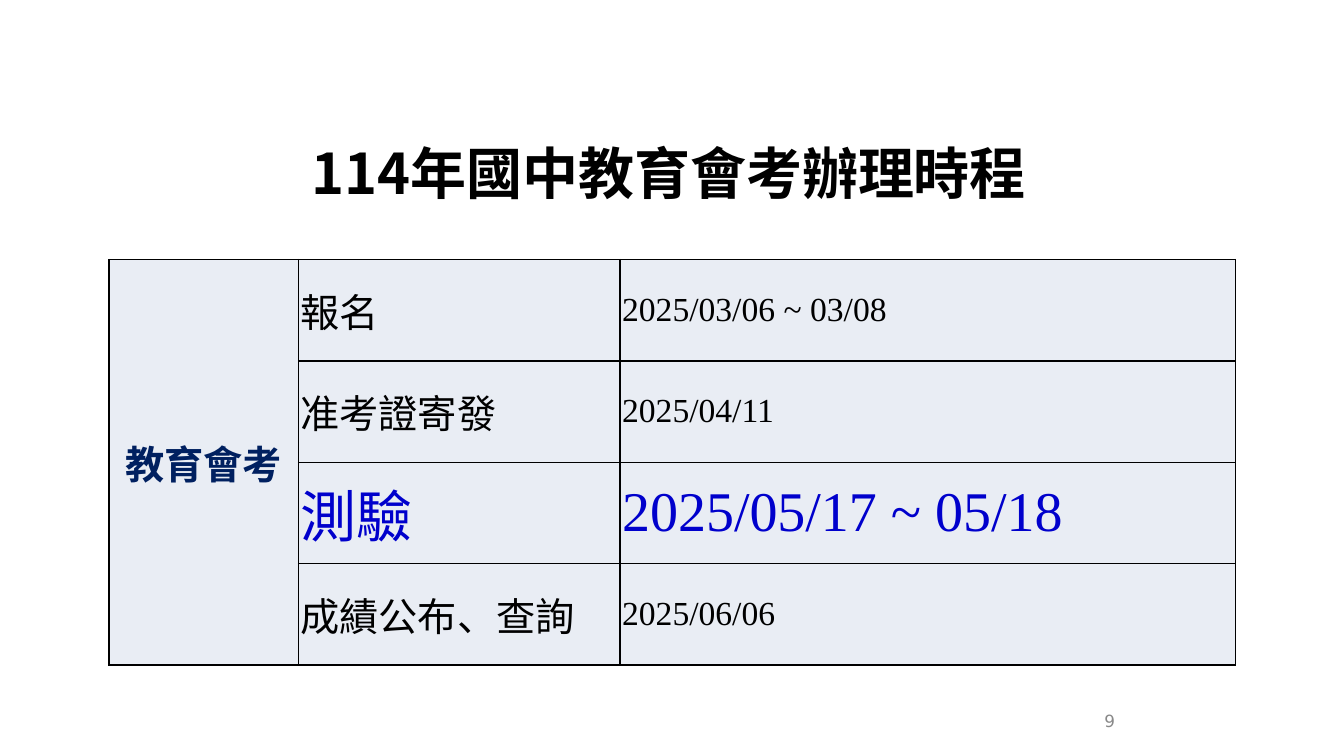
from lxml import etree
from pptx import Presentation
from pptx.dml.color import RGBColor
from pptx.enum.text import MSO_ANCHOR as Anchor, PP_ALIGN as Align
from pptx.oxml import parse_xml
from pptx.oxml.ns import nsdecls, qn
from pptx.util import Pt

BLACK = RGBColor(0x00, 0x00, 0x00)
NAVY = RGBColor(0x00, 0x20, 0x60)
BLUE = RGBColor(0x00, 0x00, 0xCC)
GRAY = RGBColor(0x89, 0x89, 0x89)
PALE = RGBColor(0xE9, 0xED, 0xF4)
CJK = "Noto Sans CJK SC"
SERIF = "Times New Roman"

COLUMN_WIDTHS = (135.4, 229.7, 439.9)
SCHEDULE = [  # step, dates, step size, date size, colour
    ("報名", "2025/03/06 ~ 03/08", 28, 24, BLACK),
    ("准考證寄發", "2025/04/11", 28, 24, BLACK),
    ("測驗", "2025/05/17 ~ 05/18", 40, 40, BLUE),
    ("成績公布、查詢", "2025/06/06", 28, 24, BLACK),
]


def write(frame, text, *, size, font, color=BLACK, bold=False,
          align=Align.LEFT, shadow=False):
    frame.word_wrap = True
    paragraph = frame.paragraphs[0]
    paragraph.alignment = align
    run = paragraph.add_run()
    run.text = text
    run.font.size, run.font.bold, run.font.name = Pt(size), bold, font
    run.font.color.rgb = color
    latin = run.font._element.find(qn("a:latin"))
    latin.addnext(parse_xml(f'<a:ea {nsdecls("a")} typeface="{CJK}"/>'))
    if shadow:
        latin.addprevious(parse_xml(
            f'<a:effectLst {nsdecls("a")}>'
            '<a:outerShdw blurRad="38100" dist="38100" dir="2700000" algn="tl">'
            '<a:srgbClr val="000000"><a:alpha val="43000"/></a:srgbClr>'
            '</a:outerShdw></a:effectLst>'))


def add_label(slide, box, text, **text_format):
    frame = slide.shapes.add_textbox(*map(Pt, box)).text_frame
    frame.vertical_anchor = Anchor.MIDDLE
    write(frame, text, **text_format)


def style_cell(cell):
    cell.fill.solid()
    cell.fill.fore_color.rgb = PALE
    cell.vertical_anchor = Anchor.MIDDLE
    cell.margin_left = cell.margin_right = Pt(1.5)
    cell.margin_top = cell.margin_bottom = Pt(0)
    # Borders come before the fill in the cell properties
    properties = cell._tc.get_or_add_tcPr()
    for position, side in enumerate(("lnL", "lnR", "lnT", "lnB")):
        border = etree.Element(qn(f"a:{side}"), w=str(Pt(1)))
        fill = etree.SubElement(border, qn("a:solidFill"))
        etree.SubElement(fill, qn("a:srgbClr"), val=str(BLACK))
        properties.insert(position, border)


def add_schedule(slide, left, top, width, height):
    grid = slide.shapes.add_table(len(SCHEDULE), len(COLUMN_WIDTHS), Pt(left),
                                  Pt(top), Pt(width), Pt(height)).table
    for column, column_width in zip(grid.columns, COLUMN_WIDTHS):
        column.width = Pt(column_width)
    for row in grid.rows:
        row.height = Pt(height / len(SCHEDULE))
        for cell in row.cells:
            style_cell(cell)

    # Exam name spans every row
    exam = grid.cell(0, 0)
    exam.merge(grid.cell(len(SCHEDULE) - 1, 0))
    write(exam.text_frame, "教育會考", size=28, font=SERIF, color=NAVY,
          bold=True, align=Align.CENTER)

    # Steps and their dates
    for index, (step, dates, step_size, date_size, color) in enumerate(SCHEDULE):
        write(grid.cell(index, 1).text_frame, step, size=step_size,
              font=SERIF, color=color)
        write(grid.cell(index, 2).text_frame, dates, size=date_size,
              font=SERIF, color=color)


def main():
    deck = Presentation()
    deck.slide_width, deck.slide_height = Pt(960), Pt(540)
    slide = deck.slides.add_slide(deck.slide_layouts[6])
    # Page number
    add_label(slide, (635.8, 500.4, 167.8, 28.8), "9", size=12,
              font="DejaVu Sans", color=GRAY, align=Align.RIGHT)
    add_schedule(slide, 77.8, 185.4, sum(COLUMN_WIDTHS), 289.6)
    # Title
    add_label(slide, (139.7, 82.8, 676, 80), "114年國中教育會考辦理時程", size=40,
              font=CJK, bold=True, align=Align.CENTER, shadow=True)
    deck.save("out.pptx")


if __name__ == "__main__":
    main()
